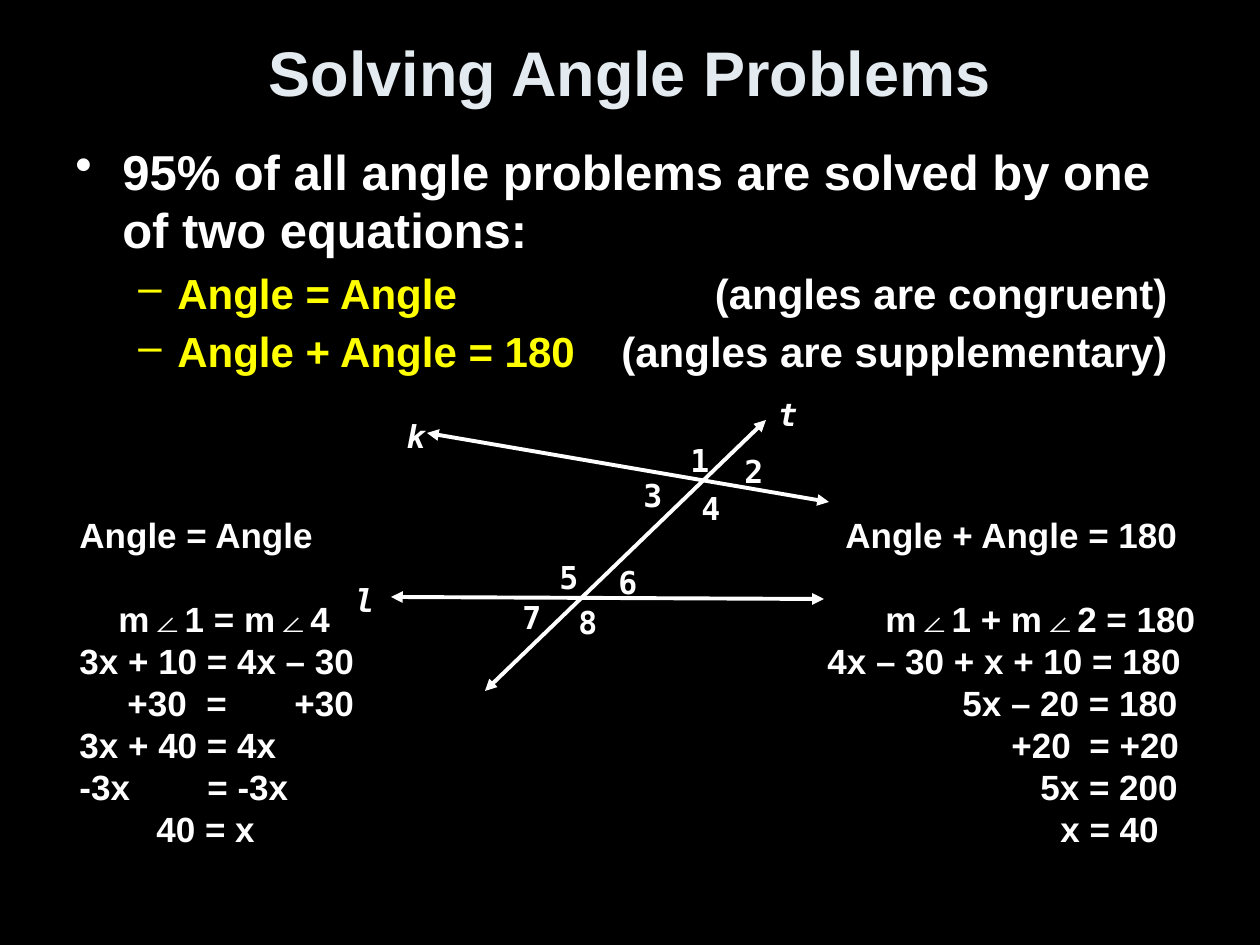
import pptx
import pptx.util
import pptx.dml.color
import pptx.enum.shapes
import pptx.enum.text
import pptx.oxml.ns
import lxml.etree

EMU_PER_PX = 914400 / 126
COLORS = {"background": "000000", "title": "E3EBF1", "text": "FFFFFF", "equation": "FFFF00"}
SANS, MONO = "Arial", "DejaVu Sans Mono"
LINE_PITCH = 1.2
ALIGN = pptx.enum.text.PP_ALIGN
ANCHOR = pptx.enum.text.MSO_ANCHOR

# Content
TITLE = "Solving Angle Problems"
# text, size, colour, bullet, left margin px, hanging px
BULLETS = [
    ("95% of all angle problems are solved by one of two equations:", 28, "text", "•", 47, 47),
    ("Angle = Angle", 24, "equation", "–", 102, 39),
    ("Angle + Angle = 180", 24, "equation", "–", 102, 39),
]
NOTES = ["(angles are congruent)", "(angles are supplementary)"]

# Each worked line: pieces of text with their offset in px from the column edge
SOLUTIONS = [
    ((67, 507, 310, 352), [
        [(0, "Angle = Angle")],
        [(39, "m∠1 = m∠4")],
        [(0, "3x + 10 = 4x – 30")],
        [(48, "+30"), (127, "="), (215, "+30")],
        [(0, "3x + 40 = 4x")],
        [(0, "-3x"), (128, "= -3x")],
        [(77, "40 = x")],
    ]),
    ((815, 507, 421, 352), [
        [(18, "Angle + Angle = 180")],
        [(58, "m∠1 + m∠2 = 180")],
        [(0, "4x – 30 + x + 10 = 180")],
        [(135, "5x – 20 = 180")],
        [(184, "+20"), (262, "= +20")],
        [(213, "5x = 200")],
        [(233, "x = 40")],
    ]),
]

LINES = {  # from x, from y, to x, to y
    "k": (427, 433, 829, 502),
    "l": (391, 597, 824, 599),
    "t": (766, 420, 485, 691),
}
LINE_LABELS = [("t", 766, 389), ("k", 394, 411), ("l", 343, 575)]
ANGLE_LABELS = [
    ("1", 678, 435), ("2", 732, 446), ("3", 631, 470), ("4", 689, 483),
    ("5", 547, 552), ("6", 606, 557), ("7", 510, 592), ("8", 566, 597),
]


def px(value):
    return pptx.util.Emu(round(value * EMU_PER_PX))


def color(name):
    return pptx.dml.color.RGBColor.from_string(COLORS[name])


def add_box(slide, left, top, width, height, anchor=ANCHOR.TOP):
    shape = slide.shapes.add_textbox(px(left), px(top), px(width), px(height))
    frame = shape.text_frame
    frame.word_wrap = True
    frame.vertical_anchor = anchor
    return frame


def next_paragraph(frame, index):
    return frame.add_paragraph() if index else frame.paragraphs[0]


def write(paragraph, text, size, color_name="text", font=SANS, italic=False,
          align=ALIGN.LEFT, before=0):
    paragraph.alignment = align
    paragraph.line_spacing = pptx.util.Pt(round(size * LINE_PITCH, 1))
    paragraph.space_before = pptx.util.Pt(before)
    run = paragraph.add_run()
    run.text = text
    run.font.name = font
    run.font.size = pptx.util.Pt(size)
    run.font.bold = True
    run.font.italic = italic
    run.font.color.rgb = color(color_name)


def add_child(parent, tag, **attributes):
    child = lxml.etree.SubElement(parent, pptx.oxml.ns.qn(tag))
    for name, value in attributes.items():
        child.set(name, str(value))
    return child


def add_arrow(slide, x1, y1, x2, y2):
    connector = slide.shapes.add_connector(
        pptx.enum.shapes.MSO_CONNECTOR.STRAIGHT, px(x1), px(y1), px(x2), px(y2))
    connector.line.color.rgb = color("text")
    connector.line.width = pptx.util.Pt(2.25)
    outline = connector.line._get_or_add_ln()
    for end in ("a:headEnd", "a:tailEnd"):
        add_child(outline, end, type="triangle")
    add_child(connector._element.spPr, "a:effectLst")


def add_solution(slide, box, lines):
    frame = add_box(slide, *box)
    for index, pieces in enumerate(lines):
        paragraph = next_paragraph(frame, index)
        stops = [offset for offset, _ in pieces if offset]
        properties = paragraph._p.get_or_add_pPr()
        if stops:
            tabs = add_child(properties, "a:tabLst")
            for offset in stops:
                add_child(tabs, "a:tab", pos=px(offset), algn="l")
        text = "".join(("\t" if offset else "") + piece for offset, piece in pieces)
        write(paragraph, text, 20, before=24 if index == 1 else 0)


def main():
    presentation = pptx.Presentation()
    presentation.slide_width, presentation.slide_height = px(1260), px(945)
    slide = presentation.slides.add_slide(presentation.slide_layouts[6])
    slide.background.fill.solid()
    slide.background.fill.fore_color.rgb = color("background")

    # Title
    frame = add_box(slide, 63, 18, 1134, 106, ANCHOR.MIDDLE)
    write(frame.paragraphs[0], TITLE, 36, "title", align=ALIGN.CENTER)

    # Bulleted equations
    frame = add_box(slide, 63, 135, 1134, 281)
    for index, (text, size, color_name, bullet, margin, hanging) in enumerate(BULLETS):
        paragraph = next_paragraph(frame, index)
        properties = paragraph._p.get_or_add_pPr()
        properties.set("marL", str(px(margin)))
        properties.set("indent", str(px(-hanging)))
        add_child(properties, "a:buChar", char=bullet)
        write(paragraph, text, size, color_name, before=size * 0.2 if index else 0)

    # Meaning of each equation, level with its bullet
    frame = add_box(slide, 600, 261, 580, 130)
    for index, note in enumerate(NOTES):
        write(next_paragraph(frame, index), note, 24, align=ALIGN.RIGHT,
              before=4.8 if index else 0)

    # Worked solutions
    for box, lines in SOLUTIONS:
        add_solution(slide, box, lines)

    # Two lines cut by a transversal
    for ends in LINES.values():
        add_arrow(slide, *ends)
    for labels, italic in ((LINE_LABELS, True), (ANGLE_LABELS, False)):
        for text, left, top in labels:
            frame = add_box(slide, left, top, 46, 50)
            write(frame.paragraphs[0], text, 18, font=MONO, italic=italic)

    presentation.save("out.pptx")


if __name__ == "__main__":
    main()
